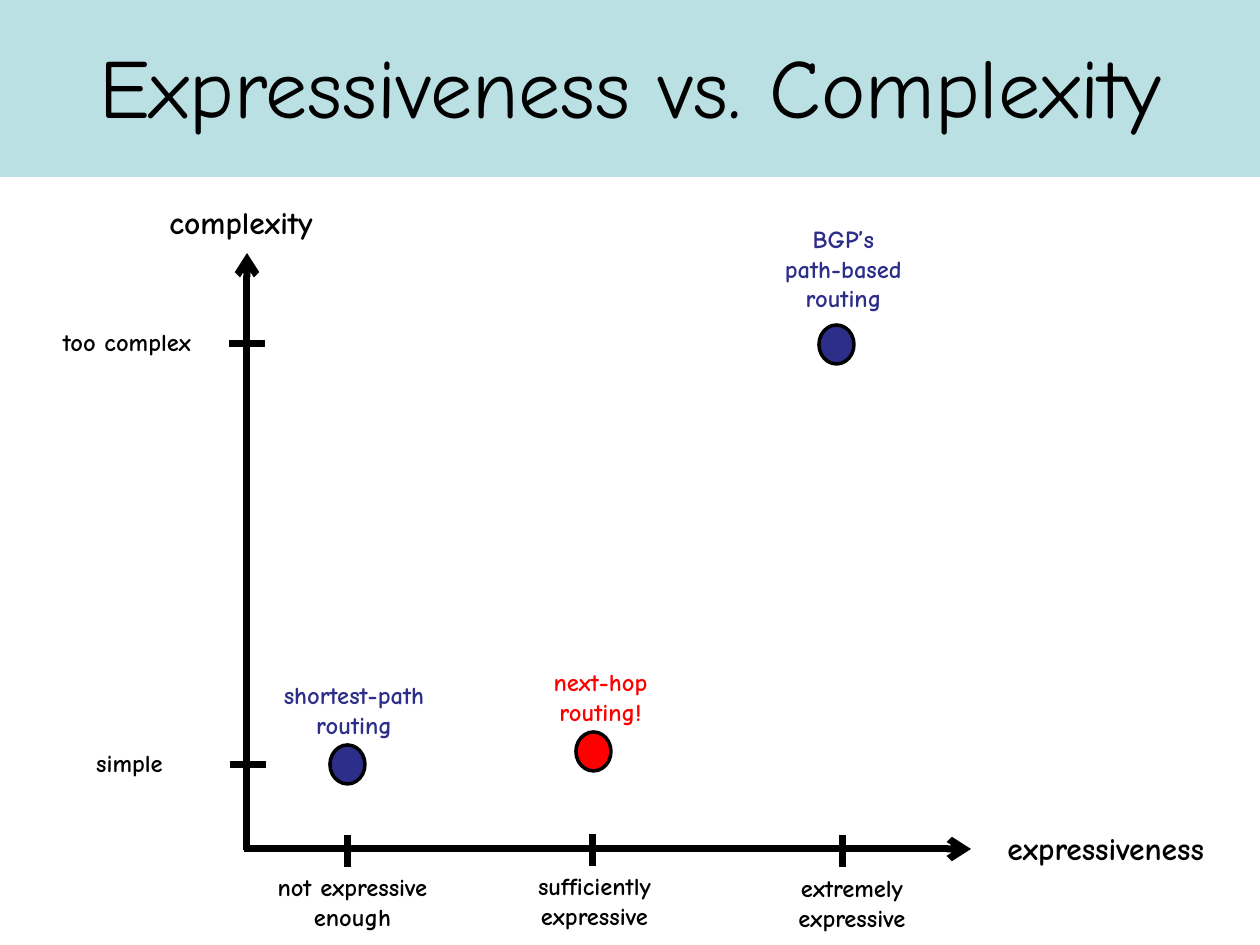
from lxml.etree import SubElement
from pptx import Presentation
from pptx.dml.color import RGBColor
from pptx.enum.shapes import MSO_CONNECTOR as Conn, MSO_SHAPE as Kind
from pptx.enum.text import MSO_ANCHOR as Anchor, MSO_AUTO_SIZE as Fit, PP_ALIGN as Align
from pptx.oxml.ns import qn
from pptx.util import Pt

# Content, lengths in px
FONT = "Comic Neue"
HEX = {"ink": "000000", "band": "BBE0E3", "blue": "2D2D8A", "red": "FF0000"}
TITLE = "Expressiveness vs. Complexity"
AXES = [(247, 850, 247, 253), (244, 849, 971, 849)]
NAMES = [("complexity", 157, 197, 185), ("expressiveness", 995, 823, 251)]
# Ticks: label, tick centre x and y, label left, top and width
XTICKS = [
    ("not expressive\nenough", 348, 851, 253, 866, 199),
    ("sufficiently\nexpressive", 593, 850, 514, 865, 161),
    ("extremely\nexpressive", 843, 851, 774, 867, 156),
]
YTICKS = [
    ("simple", 248, 765, 81, 742, 97),
    ("too complex", 247, 344, 43, 321, 168),
]
# Points: label, colour, dot left and top, label left, top and width
POINTS = [
    ("shortest-path\nrouting", "blue", 330, 745, 257, 674, 194),
    ("next-hop\nrouting!", "red", 576, 732, 533, 661, 135),
    ("BGP’s\npath-based\nrouting", "blue", 819, 325, 762, 218, 163),
]
DOT = (35, 39)
HALF_X, HALF_Y = 18, 16  # half lengths of the ticks


def px(*vals):
    return [round(v * 914400 / 126) for v in vals]


def tint(name):
    return RGBColor.from_string(HEX[name])


def style(para, size, color="ink", bold=True, align=Align.CENTER):
    para.alignment = align
    font = para.font
    font.name, font.size, font.bold = FONT, Pt(size), bold
    font.color.rgb = tint(color)


def add_text(shapes, text, left, top, width, size=14, color="ink", align=Align.CENTER):
    lines = text.count("\n") + 1
    height = 13 + round(size * 2.1) * lines
    frame = shapes.add_textbox(*px(left, top, width, height)).text_frame
    frame.word_wrap = False
    frame.auto_size = Fit.SHAPE_TO_FIT_TEXT
    para = frame.paragraphs[0]
    para.text = text
    style(para, size, color, align=align)


def add_line(ends, arrow=False):
    link = slide.shapes.add_connector(Conn.STRAIGHT, *px(*ends))
    link.line.color.rgb = tint("ink")
    link.line.width = Pt(4)
    if arrow:
        SubElement(link.line._get_or_add_ln(), qn("a:tailEnd"), type="arrow")
    SubElement(link._element.spPr, qn("a:effectLst"))


def add_solid(shapes, kind, box, color):
    shape = shapes.add_shape(kind, *px(*box))
    shape.shadow.inherit = False
    shape.fill.solid()
    shape.fill.fore_color.rgb = tint(color)
    return shape


deck = Presentation()
deck.slide_width, deck.slide_height = px(1260, 945)
slide = deck.slides.add_slide(deck.slide_layouts[5])

# Title on its band
title = slide.shapes.title
title.left, title.top, title.width, title.height = px(0, 6, 1260, 158)
title.text_frame.text = TITLE
title.text_frame.vertical_anchor = Anchor.MIDDLE
style(title.text_frame.paragraphs[0], 48, bold=False)
band = add_solid(slide.shapes, Kind.RECTANGLE, (0, 0, 1260, 177), "band")
band.line.fill.background()
title._element.addprevious(band._element)

# Axes and their names
for ends in AXES:
    add_line(ends, arrow=True)
for text, left, top, width in NAMES:
    add_text(slide.shapes, text, left, top, width, size=18, align=Align.LEFT)

# Ticks and their labels
for ticks, dx, dy in ((XTICKS, 0, HALF_Y), (YTICKS, HALF_X, 0)):
    for text, x, y, *place in ticks:
        add_line((x - dx, y - dy, x + dx, y + dy))
        add_text(slide.shapes, text, *place)

# Points, each grouped with its label
for text, color, x, y, *place in POINTS:
    group = slide.shapes.add_group_shape().shapes
    dot = add_solid(group, Kind.OVAL, (x, y, *DOT), color)
    dot.line.color.rgb = tint("ink")
    dot.line.width = Pt(2)
    add_text(group, text, *place, color=color)

deck.save("out.pptx")
